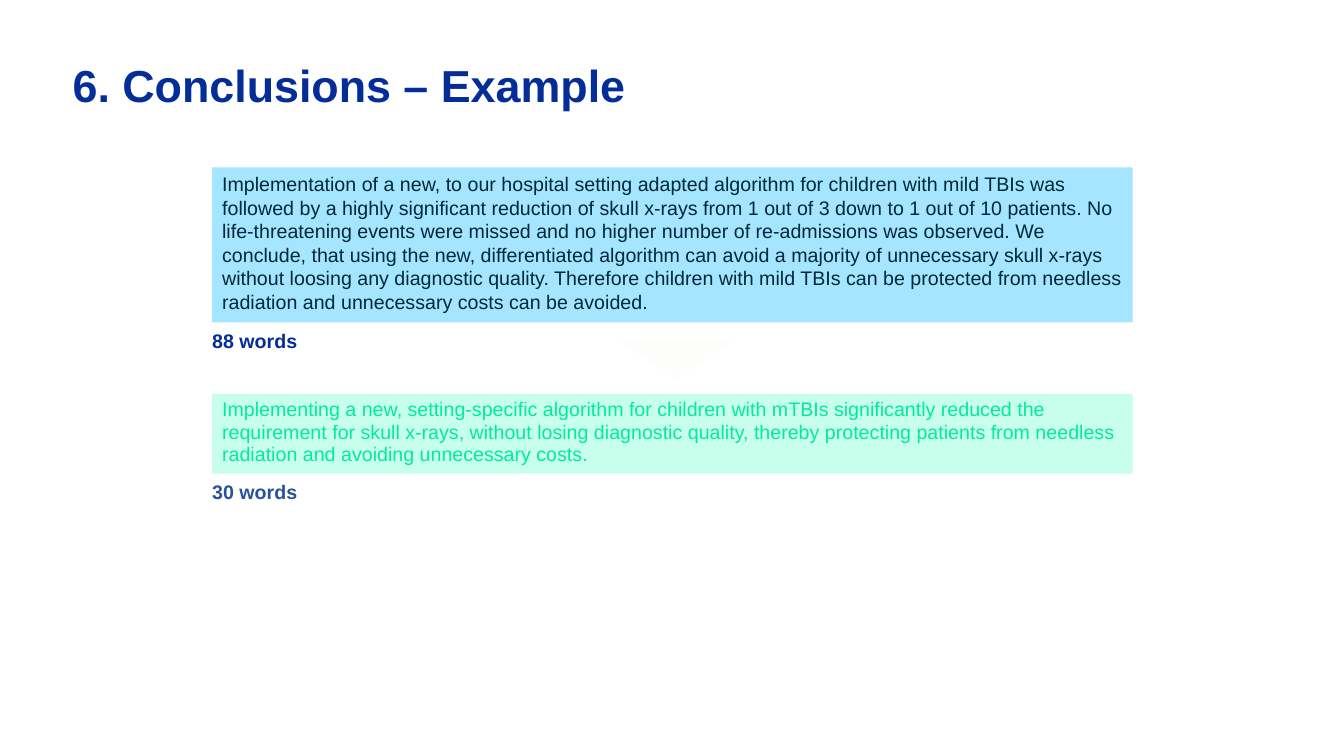
from pptx import Presentation
from pptx.dml.color import RGBColor
from pptx.enum.shapes import MSO_SHAPE
from pptx.enum.text import MSO_ANCHOR, PP_ALIGN
from pptx.util import Inches, Pt

RECT, PENTAGON = MSO_SHAPE.RECTANGLE, MSO_SHAPE.PENTAGON
TOP, LEFT = MSO_ANCHOR.TOP, PP_ALIGN.LEFT
CELL = Inches(0.1)
COLORS = {"navy": "042D98", "blue": "29529B", "ink": "00293A", "sky": "A5E5FF",
          "mint": "C8FFEC", "green": "00EB9B", "pale": "FDFDFC"}
TITLE = {"size": Pt(32), "bold": True, "name": "Arial"}
BODY = {"size": Pt(14), "bold": False, "name": "Arial"}
LABEL = {"size": Pt(14), "bold": True, "name": "Arial"}
NO_INSETS = {"margin_left": 0, "margin_top": 0, "margin_right": 0, "margin_bottom": 0}

LONG_TEXT = (
    "Implementation of a new, to our hospital setting adapted algorithm for children "
    "with mild TBIs was followed by a highly significant reduction of skull x-rays from "
    "1 out of 3 down to 1 out of 10 patients. No life-threatening events were missed and "
    "no higher number of re-admissions was observed. We conclude, that using the new, "
    "differentiated algorithm can avoid a majority of unnecessary skull x-rays without "
    "loosing any diagnostic quality. Therefore children with mild TBIs can be protected "
    "from needless radiation and unnecessary costs can be avoided.")
SHORT_TEXT = (
    "Implementing a new, setting-specific algorithm for children with mTBIs "
    "significantly reduced the requirement for skull x-rays, without losing diagnostic "
    "quality, thereby protecting patients from needless radiation and avoiding "
    "unnecessary costs.")


def cells(*box):
    """Turn grid cells into slide lengths."""
    return [round(v * CELL) for v in box]


def set_all(target, values):
    """Set each named attribute of the target."""
    for name, value in values.items():
        setattr(target, name, value)


def write(sp, text, font, color, frame=None, paragraph=None):
    """Write one formatted paragraph into a shape."""
    tf = sp.text_frame
    set_all(tf, {"word_wrap": True, "vertical_anchor": TOP, **(frame or {})})
    p = tf.paragraphs[0]
    set_all(p, {"alignment": LEFT, **(paragraph or {})})
    r = p.add_run()
    r.text = text
    set_all(r.font, font)
    r.font.color.rgb = RGBColor.from_string(COLORS[color])


def add_filled(s, kind, box, fill):
    """Add a plain filled shape without outline or shadow."""
    sp = s.shapes.add_shape(kind, *cells(*box))
    sp.shadow.inherit = False
    sp.fill.solid()
    sp.fill.fore_color.rgb = RGBColor.from_string(COLORS[fill])
    sp.line.fill.background()
    return sp


def add_title(s, box, text):
    """Place the slide title."""
    write(s.shapes.add_textbox(*cells(*box)), text, TITLE, "navy", NO_INSETS)


def add_version(s, box, text, fill, color, spacing, count, count_color):
    """Place a conclusion panel with its word count below."""
    x, y, w, h = box
    panel = add_filled(s, RECT, box, fill)
    write(panel, text, BODY, color,
          paragraph={"line_spacing": spacing, "space_after": Pt(3)})
    label = s.shapes.add_textbox(*cells(x, y + h + 0.75, 21.3, 3.8))
    write(label, count, LABEL, count_color, NO_INSETS, {"line_spacing": 0.95})


def add_down_arrow(s, box):
    """Fill the box with a triangle pointing down."""
    x, y, w, h = box
    sp = add_filled(s, PENTAGON, (x + (w - h) / 2, y + (h - w) / 2, h, w), "pale")
    sp.adjustments[0] = 1
    sp.rotation = 90


def main():
    """Build and save the slide."""
    prs = Presentation()
    prs.slide_width, prs.slide_height = Inches(13.33), Inches(7.5)
    s = prs.slides.add_slide(prs.slide_layouts[6])
    add_title(s, (7.2, 5.7, 118.9, 10.6), "6. Conclusions – Example")
    add_version(s, (21.05, 16.6, 91.3, 15.4), LONG_TEXT, "sky", "ink", 1.0,
                "88 words", "navy")
    add_version(s, (21.05, 39.1, 91.3, 7.9), SHORT_TEXT, "mint", "green", 0.95,
                "30 words", "blue")
    add_down_arrow(s, (61.2, 33.55, 11.8, 4.1))
    prs.save("out.pptx")


if __name__ == "__main__":
    main()
